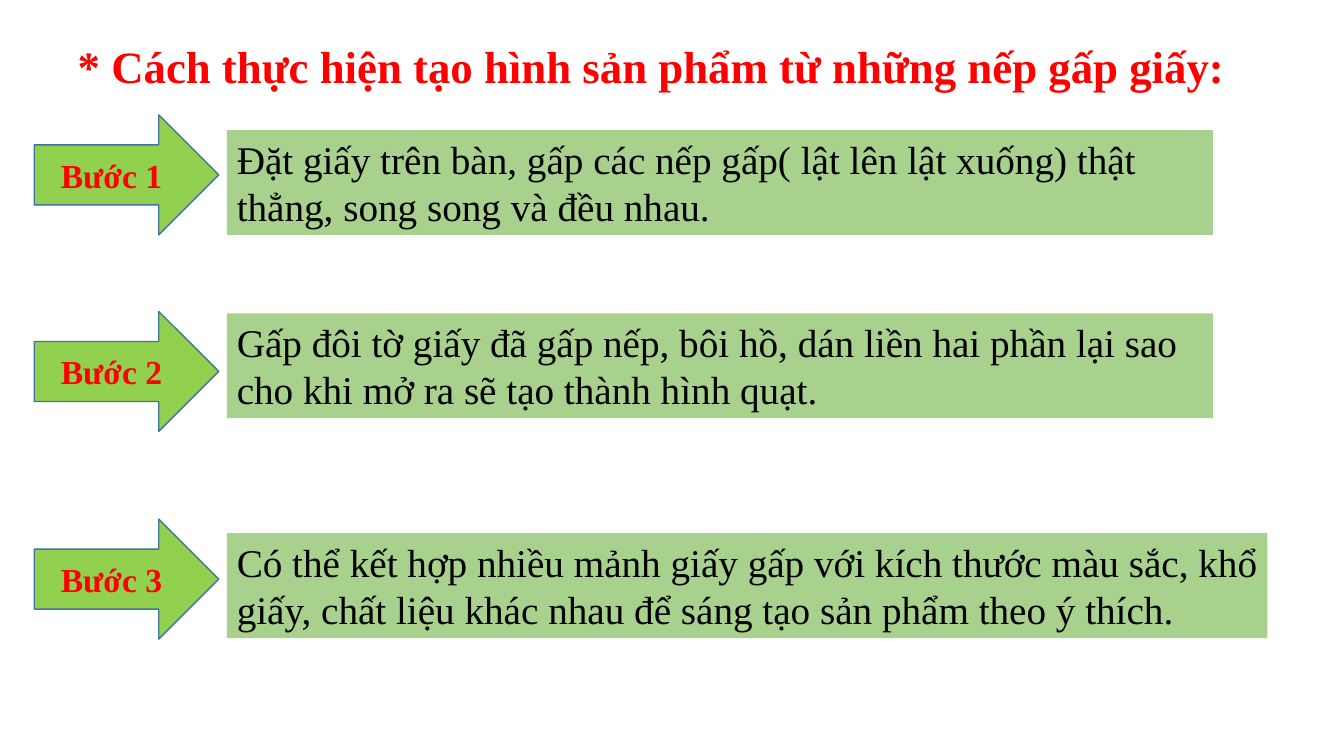
"""Build the slide with the three steps for shaping a folded-paper product."""
from dataclasses import dataclass

from pptx import Presentation
from pptx import util as u
from pptx.dml.color import RGBColor
from pptx.enum import shapes, text

RED = RGBColor(0xFF, 0x00, 0x00)
BLACK = RGBColor(0x00, 0x00, 0x00)
ARROW_GREEN = RGBColor(0x92, 0xD0, 0x50)
BOX_GREEN = RGBColor(0xA9, 0xD1, 0x8E)
OUTLINE_BLUE = RGBColor(0x43, 0x73, 0x9E)

TITLE_FORMAT = {"name": "Times New Roman", "size": u.Pt(32), "bold": True}
LABEL_FORMAT = {"name": "Times New Roman", "size": u.Pt(24), "bold": True}
BODY_FORMAT = {"name": "Times New Roman", "size": u.Pt(28), "bold": False}


@dataclass(frozen=True)
class Step:
    """One step: its label, its instruction and where both stand in inches."""

    label: str
    instruction: str
    arrow_top: float
    box_top: float
    box_width: float


STEPS = [
    Step("Bước 1", "Đặt giấy trên bàn, gấp các nếp gấp( lật lên lật xuống) thật "
         "thẳng, song song và đều nhau.", 1.14, 1.29, 9.78),
    Step("Bước 2", "Gấp đôi tờ giấy đã gấp nếp, bôi hồ, dán liền hai phần lại sao "
         "cho khi mở ra sẽ tạo thành hình quạt.", 3.09, 3.11, 9.78),
    Step("Bước 3", "Có thể kết hợp nhiều mảnh giấy gấp với kích thước màu sắc, khổ "
         "giấy, chất liệu khác nhau để sáng tạo sản phẩm theo ý thích.",
         5.15, 5.29, 10.32),
]


def write(sp, content: str, font_format: dict, color: RGBColor,
          align: text.PP_ALIGN, anchor: text.MSO_ANCHOR, wrap: bool = True) -> None:
    """Put one formatted paragraph into a shape."""
    tf = sp.text_frame
    tf.word_wrap = wrap
    tf.vertical_anchor = anchor
    p = tf.paragraphs[0]
    p.alignment = align
    r = p.add_run()
    r.text = content
    for name, value in font_format.items():
        setattr(r.font, name, value)
    r.font.color.rgb = color


def add_title(s, content: str) -> None:
    """Place the heading in the title placeholder."""
    sp = s.shapes.title
    place = {"left": 0.67, "top": 0.33, "width": 11.68, "height": 0.64}
    for name, value in place.items():
        setattr(sp, name, u.Inches(value))
    write(sp, content, TITLE_FORMAT, RED, text.PP_ALIGN.LEFT,
          text.MSO_ANCHOR.TOP, wrap=False)
    sp.text_frame.auto_size = text.MSO_AUTO_SIZE.SHAPE_TO_FIT_TEXT


def add_filled(s, kind: shapes.MSO_SHAPE, left: float, top: float,
               width: float, height: float, fill: RGBColor):
    """Add a flat filled shape measured in inches."""
    sp = s.shapes.add_shape(kind, u.Inches(left), u.Inches(top),
                            u.Inches(width), u.Inches(height))
    sp.shadow.inherit = False
    sp.fill.solid()
    sp.fill.fore_color.rgb = fill
    return sp


def add_step(s, step: Step) -> None:
    """Draw the labelled arrow and the instruction box of a step."""
    arrow = add_filled(s, shapes.MSO_SHAPE.RIGHT_ARROW, 0.34, step.arrow_top,
                       1.83, 1.19, ARROW_GREEN)
    arrow.line.color.rgb = OUTLINE_BLUE
    arrow.line.width = u.Pt(1)
    write(arrow, step.label, LABEL_FORMAT, RED, text.PP_ALIGN.CENTER,
          text.MSO_ANCHOR.MIDDLE)

    box = add_filled(s, shapes.MSO_SHAPE.RECTANGLE, 2.25, step.box_top,
                     step.box_width, 1.04, BOX_GREEN)
    box.line.fill.background()
    write(box, step.instruction, BODY_FORMAT, BLACK, text.PP_ALIGN.LEFT,
          text.MSO_ANCHOR.TOP)
    box.text_frame.auto_size = text.MSO_AUTO_SIZE.SHAPE_TO_FIT_TEXT


def main() -> None:
    """Create the presentation and save it."""
    prs = Presentation()
    prs.slide_width, prs.slide_height = u.Inches(13.33), u.Inches(7.5)
    s = prs.slides.add_slide(prs.slide_layouts.get_by_name("Title Only"))
    add_title(s, "* Cách thực hiện tạo hình sản phẩm từ những nếp gấp giấy:")
    for step in STEPS:
        add_step(s, step)
    prs.save("out.pptx")


if __name__ == "__main__":
    main()
